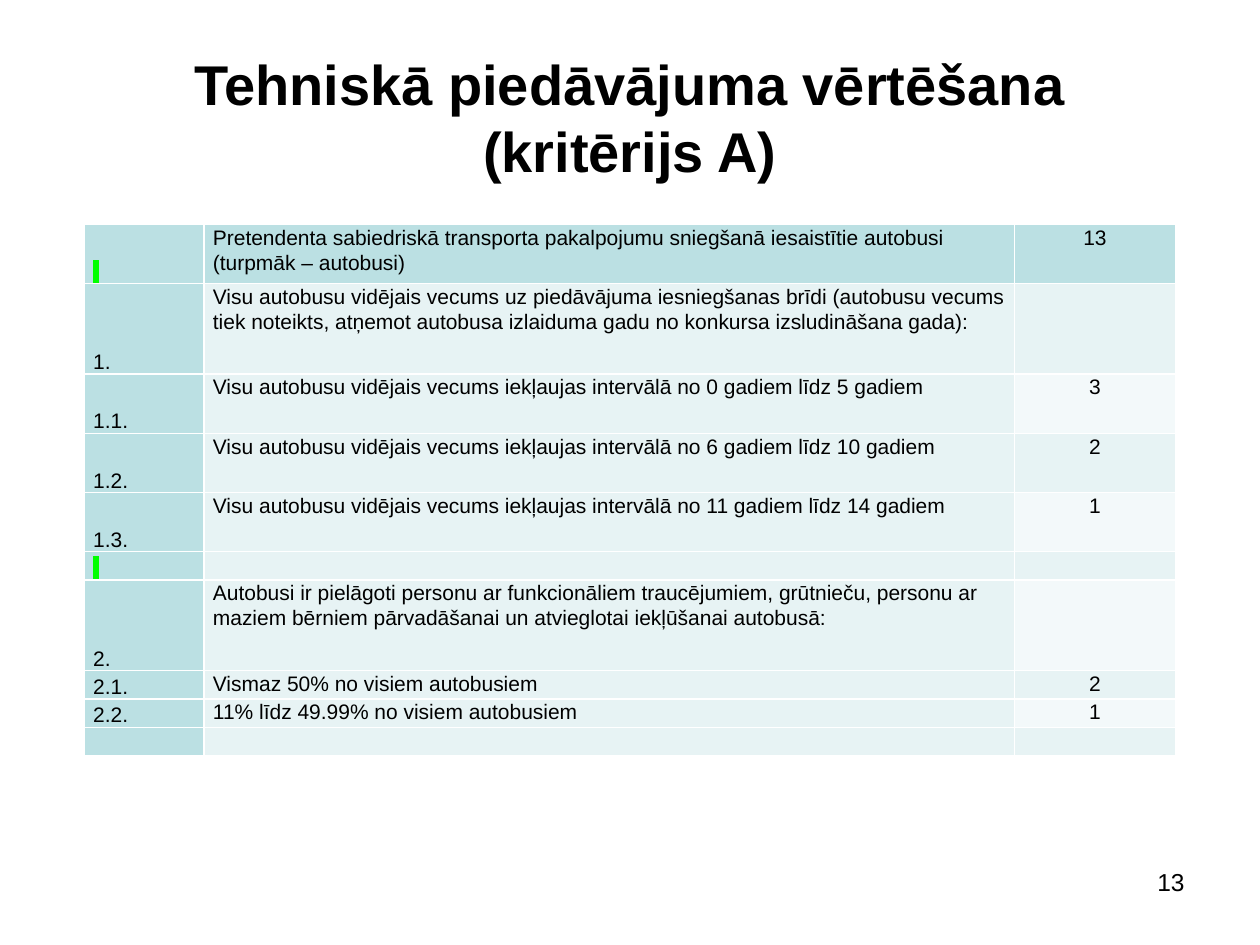
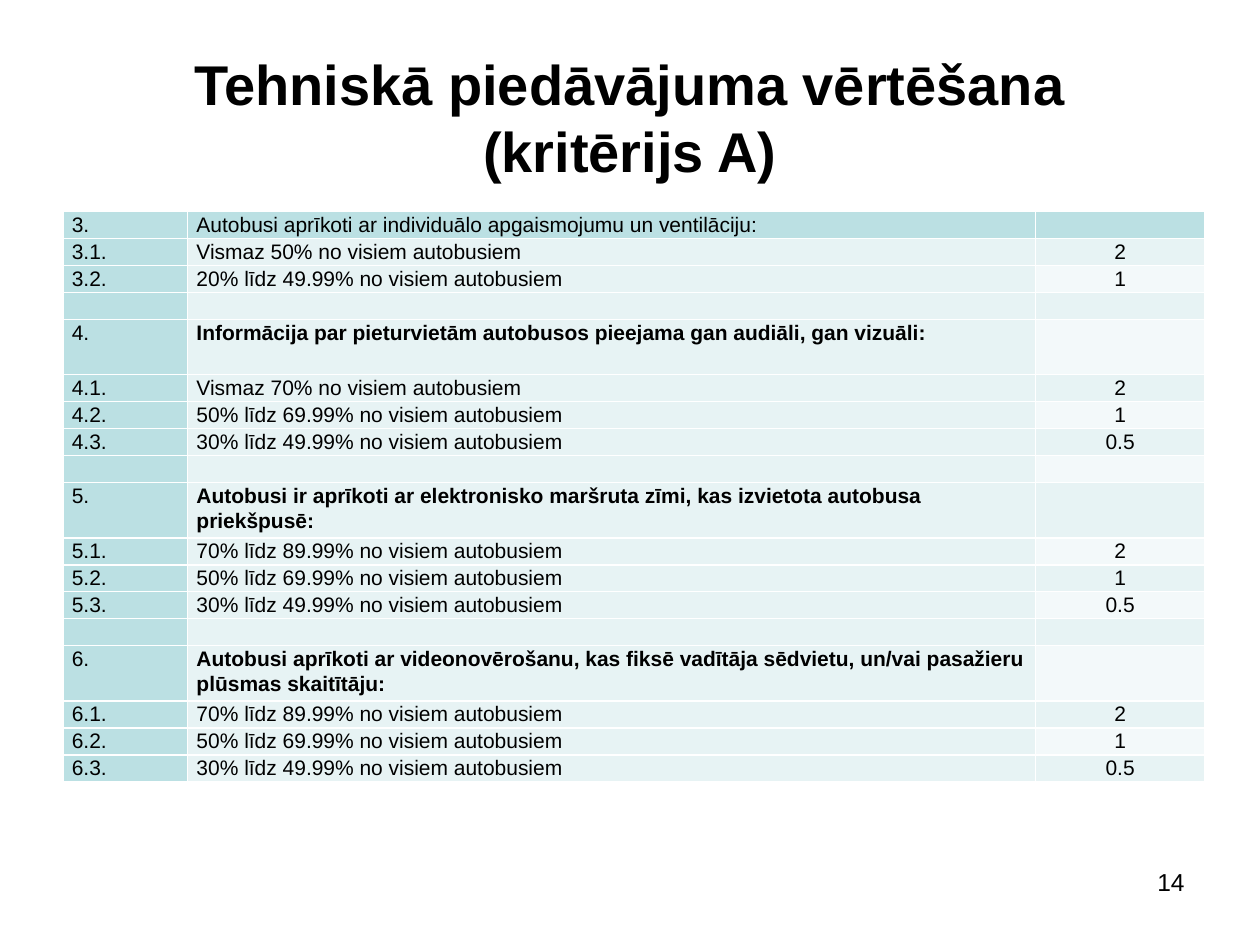
from lxml import etree
from pptx import Presentation
from pptx import util as u
from pptx.dml import color
from pptx.enum import text
from pptx.oxml import ns

COLORS = {
    "ink": "000000",
    "border": "FFFFFF",
    "head": "BBE0E3",
    "band": "E7F3F4",
    "light": "F3F9FA",
    "mark": "00FF00",
}
FONT = "Arial"
TITLE_LINES = ["Tehniskā piedāvājuma vērtēšana", "(kritērijs A)"]
LEFT, CENTER = text.PP_ALIGN.LEFT, text.PP_ALIGN.CENTER
JUSTIFY, RIGHT = text.PP_ALIGN.JUSTIFY, text.PP_ALIGN.RIGHT
TOP, BOTTOM = text.MSO_ANCHOR.TOP, text.MSO_ANCHOR.BOTTOM
BLANK = ("", "", "")
MARKED = " "

AGE = "Visu autobusu vidējais vecums iekļaujas intervālā no {} gadiem līdz {} gadiem"
SHARE = "{} no visiem autobusiem"

pages = [
    {
        "number": "13",
        "left": 0.67, "top": 1.78, "height": 4.22,
        "columns": [0.95, 6.43, 1.28],
        "tall": {0: 0.47, 1: 0.72, 2: 0.47, 3: 0.47, 4: 0.47, 6: 0.72},
        "number_anchor": BOTTOM,
        "justified": range(1, 5),
        "bold": [],
        "rows": [
            (MARKED, "Pretendenta sabiedriskā transporta pakalpojumu sniegšanā iesaistītie autobusi (turpmāk – autobusi)", "13"),
            ("1.", "Visu autobusu vidējais vecums uz piedāvājuma iesniegšanas brīdi (autobusu vecums tiek noteikts, atņemot autobusa izlaiduma gadu no konkursa izsludināšana gada):", ""),
            ("1.1.", AGE.format(0, 5), "3"),
            ("1.2.", AGE.format(6, 10), "2"),
            ("1.3.", AGE.format(11, 14), "1"),
            (MARKED, "", ""),
            ("2.", "Autobusi ir pielāgoti personu ar funkcionāliem traucējumiem, grūtnieču, personu ar maziem bērniem pārvadāšanai un atvieglotai iekļūšanai autobusā:", ""),
            ("2.1.", SHARE.format("Vismaz 50%"), "2"),
            ("2.2.", SHARE.format("11% līdz 49.99%"), "1"),
            BLANK,
        ],
    },
    {
        "number": "14",
        "left": 0.5, "top": 1.68, "height": 4.5,
        "columns": [0.99, 6.73, 1.34],
        "tall": {4: 0.44, 9: 0.44, 14: 0.44},
        "number_anchor": TOP,
        "justified": [],
        "bold": [4, 9, 14],
        "rows": [
            ("3.", "Autobusi aprīkoti ar individuālo apgaismojumu un ventilāciju:", ""),
            ("3.1.", SHARE.format("Vismaz 50%"), "2"),
            ("3.2.", SHARE.format("20% līdz 49.99%"), "1"),
            BLANK,
            ("4.", "Informācija par pieturvietām autobusos pieejama gan audiāli, gan vizuāli:", ""),
            ("4.1.", SHARE.format("Vismaz 70%"), "2"),
            ("4.2.", SHARE.format("50% līdz 69.99%"), "1"),
            ("4.3.", SHARE.format("30% līdz 49.99%"), "0.5"),
            BLANK,
            ("5.", "Autobusi ir aprīkoti ar elektronisko maršruta zīmi, kas izvietota autobusa priekšpusē:", ""),
            ("5.1.", SHARE.format("70% līdz 89.99%"), "2"),
            ("5.2.", SHARE.format("50% līdz 69.99%"), "1"),
            ("5.3.", SHARE.format("30% līdz 49.99%"), "0.5"),
            BLANK,
            ("6.", "Autobusi aprīkoti ar videonovērošanu, kas fiksē vadītāja sēdvietu, un/vai pasažieru plūsmas skaitītāju:", ""),
            ("6.1.", SHARE.format("70% līdz 89.99%"), "2"),
            ("6.2.", SHARE.format("50% līdz 69.99%"), "1"),
            ("6.3.", SHARE.format("30% līdz 49.99%"), "0.5"),
        ],
    },
]


def add_text(paragraph, words, size, bold=False):
    run = paragraph.add_run()
    run.text = words
    run.font.name = FONT
    run.font.size = u.Pt(size)
    run.font.bold = bold
    run.font.color.rgb = color.RGBColor.from_string(COLORS["ink"])
    return run


def add_borders(cell):
    properties = cell._tc.get_or_add_tcPr()
    for position, side in enumerate(["lnL", "lnR", "lnT", "lnB"]):
        line = etree.Element(ns.qn("a:" + side), w=str(u.Pt(1)))
        fill = etree.SubElement(line, ns.qn("a:solidFill"))
        etree.SubElement(fill, ns.qn("a:srgbClr"), val=COLORS["border"])
        properties.insert(position, line)


presentation = Presentation()
presentation.slide_width = u.Inches(10)
presentation.slide_height = u.Inches(7.5)

for page in pages:
    slide = presentation.slides.add_slide(presentation.slide_layouts[6])

    title = slide.shapes.add_textbox(u.Inches(0.5), u.Inches(0.3), u.Inches(9), u.Inches(1.25))
    title.text_frame.word_wrap = True
    title.text_frame.vertical_anchor = text.MSO_ANCHOR.MIDDLE
    paragraph = title.text_frame.paragraphs[0]
    paragraph.alignment = CENTER
    add_text(paragraph, TITLE_LINES[0], 32, True)
    paragraph.add_line_break()
    add_text(paragraph, TITLE_LINES[1], 32, True)

    rows, tall = page["rows"], page["tall"]
    short = (page["height"] - sum(tall.values())) / (len(rows) - len(tall))
    table = slide.shapes.add_table(
        len(rows), 3, u.Inches(page["left"]), u.Inches(page["top"]),
        u.Inches(sum(page["columns"])), u.Inches(page["height"])).table
    table.first_row = False
    table.horz_banding = False
    for column, width in zip(table.columns, page["columns"]):
        column.width = u.Inches(width)

    for row_index, row in enumerate(rows):
        table.rows[row_index].height = u.Inches(tall.get(row_index, short))
        score_fill = "band" if row_index % 2 else "light"
        fills = ["head", "band", score_fill] if row_index else ["head"] * 3
        wording_alignment = JUSTIFY if row_index in page["justified"] else LEFT
        alignments = [LEFT, wording_alignment, CENTER]
        for column_index, words in enumerate(row):
            cell = table.cell(row_index, column_index)
            cell.fill.solid()
            cell.fill.fore_color.rgb = color.RGBColor.from_string(COLORS[fills[column_index]])
            add_borders(cell)
            cell.margin_left = cell.margin_right = u.Inches(0.07)
            cell.margin_top = cell.margin_bottom = 0
            cell.vertical_anchor = TOP if column_index else page["number_anchor"]
            paragraph = cell.text_frame.paragraphs[0]
            paragraph.alignment = alignments[column_index]
            paragraph.line_spacing = 1.07
            if not words:
                etree.SubElement(paragraph._p, ns.qn("a:endParaRPr"), sz="1200")
                continue
            bold = column_index == 1 and row_index in page["bold"]
            run = add_text(paragraph, words, 12, bold)
            if words == MARKED:
                highlight = etree.Element(ns.qn("a:highlight"))
                etree.SubElement(highlight, ns.qn("a:srgbClr"), val=COLORS["mark"])
                run._r.rPr.find(ns.qn("a:solidFill")).addnext(highlight)

    footer = slide.shapes.add_textbox(u.Inches(7.17), u.Inches(6.83), u.Inches(2.33), u.Inches(0.52))
    footer.text_frame.word_wrap = True
    paragraph = footer.text_frame.paragraphs[0]
    paragraph.alignment = RIGHT
    add_text(paragraph, page["number"], 14)

presentation.save("out.pptx")
